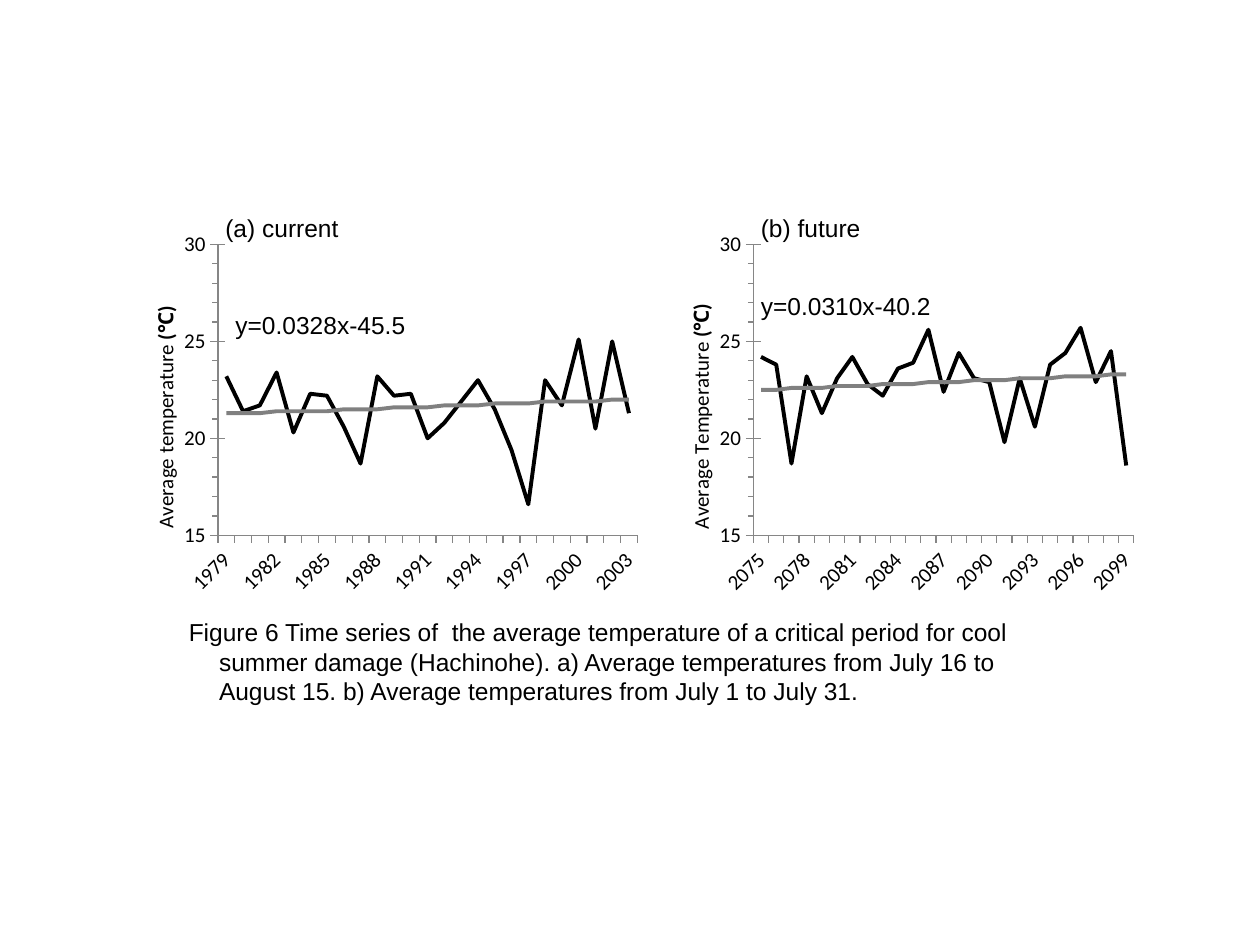
from dataclasses import dataclass

from lxml import etree
from pptx import Presentation
from pptx.chart.data import CategoryChartData
from pptx.dml.color import RGBColor
from pptx.enum.chart import XL_CHART_TYPE, XL_MARKER_STYLE, XL_TICK_MARK
from pptx.oxml.ns import qn
from pptx.util import Inches, Pt

LINE = XL_CHART_TYPE.LINE
NO_MARKER = XL_MARKER_STYLE.NONE
TICK_OUT, TICK_CROSS = XL_TICK_MARK.OUTSIDE, XL_TICK_MARK.CROSS

CHART_TOP, CHART_HEIGHT = 1.78, 3.01
PLOT_TOP, PLOT_HEIGHT = 1.94, 2.31


@dataclass(frozen=True)
class Theme:
    ink: RGBColor = RGBColor(0x00, 0x00, 0x00)
    trend: RGBColor = RGBColor(0x80, 0x80, 0x80)
    axis: RGBColor = RGBColor(0x86, 0x86, 0x86)
    text_font: str = "Arial"
    chart_font: str = "Calibri"
    text_size: Pt = Pt(14)
    chart_size: Pt = Pt(12)
    series_width: Pt = Pt(2.25)
    axis_width: Pt = Pt(0.75)


def set_layout(parent, index, inner=False, **fractions):
    """Place a chart part by hand, as fractions of the chart frame."""
    for old in parent.findall(qn("c:layout")):
        parent.remove(old)
    layout = etree.Element(qn("c:layout"))
    manual = etree.SubElement(layout, qn("c:manualLayout"))
    settings = {"layoutTarget": "inner"} if inner else {}
    settings.update(xMode="edge", yMode="edge")
    settings.update((name, f"{value:.4f}") for name, value in fractions.items())
    for name, value in settings.items():
        etree.SubElement(manual, qn(f"c:{name}")).set("val", value)
    parent.insert(index, layout)


class Figure:
    def __init__(self, page, theme):
        self.page = page
        self.theme = theme

    def text(self, content, left, top, width, height, hanging=0):
        box = self.page.shapes.add_textbox(
            Inches(left), Inches(top), Inches(width), Inches(height))
        box.text_frame.word_wrap = True
        para = box.text_frame.paragraphs[0]
        if hanging:
            properties = para._p.get_or_add_pPr()
            properties.set("marL", str(Inches(hanging)))
            properties.set("indent", str(-Inches(hanging)))
        span = para.add_run()
        span.text = content
        self.style(span.font, self.theme.text_font, self.theme.text_size)

    def style(self, font, name, size):
        font.name, font.size = name, size
        font.color.rgb = self.theme.ink

    def line_chart(self, first_year, observed, trend, title, left, width,
                   plot_left, plot_width, title_left, title_top):
        data = CategoryChartData(number_format="0.0")
        data.categories = [str(first_year + i) for i in range(len(observed))]
        data.add_series("Series 1", observed)
        data.add_series("Series 2", trend)
        chart = self.page.shapes.add_chart(
            LINE, Inches(left), Inches(CHART_TOP),
            Inches(width), Inches(CHART_HEIGHT), data).chart
        chart.has_legend = False
        chart.has_title = False
        self.style(chart.font, self.theme.chart_font, self.theme.chart_size)

        plot = chart.plots[0]
        plot.vary_by_categories = False
        for series, color in zip(plot.series, (self.theme.ink, self.theme.trend)):
            series.smooth = False
            series.marker.style = NO_MARKER
            series.format.line.width = self.theme.series_width
            series.format.line.color.rgb = color

        self.year_axis(chart)
        self.temperature_axis(chart.value_axis, title)
        set_layout(chart.element.find(".//" + qn("c:plotArea")), 0, inner=True,
                   x=(plot_left - left) / width,
                   y=(PLOT_TOP - CHART_TOP) / CHART_HEIGHT,
                   w=plot_width / width, h=PLOT_HEIGHT / CHART_HEIGHT)
        set_layout(chart.element.find(".//" + qn("c:valAx") + "/" + qn("c:title")), 1,
                   x=(title_left - left) / width,
                   y=(title_top - CHART_TOP) / CHART_HEIGHT)

    def axis_line(self, axis):
        axis.has_major_gridlines = False
        axis.format.line.color.rgb = self.theme.axis
        axis.format.line.width = self.theme.axis_width

    def year_axis(self, chart):
        """Label every third year, slanted upwards."""
        axis = chart.category_axis
        self.axis_line(axis)
        axis.major_tick_mark = TICK_OUT
        self.style(axis.tick_labels.font, self.theme.chart_font, self.theme.chart_size)
        element = chart.element.find(".//" + qn("c:catAx"))
        body = element.find(qn("c:txPr") + "/" + qn("a:bodyPr"))
        body.set("rot", "-2700000")
        body.set("vert", "horz")
        skip = etree.Element(qn("c:tickLblSkip"))
        skip.set("val", "3")
        element.find(qn("c:noMultiLvlLbl")).addprevious(skip)

    def temperature_axis(self, axis, title):
        self.axis_line(axis)
        axis.minimum_scale, axis.maximum_scale = 15, 30
        axis.major_unit, axis.minor_unit = 5, 1
        axis.major_tick_mark, axis.minor_tick_mark = TICK_CROSS, TICK_OUT
        axis.tick_labels.number_format = "0"
        axis.tick_labels.number_format_is_linked = False
        frame = axis.axis_title.text_frame
        body = frame._txBody.find(qn("a:bodyPr"))
        body.set("rot", "-5400000")
        body.set("vert", "horz")
        for content, bold in ((title + " ", False), ("(℃)", True)):
            span = frame.paragraphs[0].add_run()
            span.text = content
            self.style(span.font, self.theme.chart_font, self.theme.chart_size)
            span.font.bold = bold


CURRENT = [23.2, 21.4, 21.7, 23.4, 20.3, 22.3, 22.2, 20.6, 18.7, 23.2, 22.2, 22.3, 20,
           20.8, 21.9, 23, 21.5, 19.4, 16.6, 23, 21.7, 25.1, 20.5, 25, 21.3]
CURRENT_TREND = [21.3, 21.3, 21.3, 21.4, 21.4, 21.4, 21.4, 21.5, 21.5, 21.5, 21.6, 21.6,
                 21.6, 21.7, 21.7, 21.7, 21.8, 21.8, 21.8, 21.9, 21.9, 21.9, 21.9, 22, 22]
FUTURE = [24.2, 23.8, 18.7, 23.2, 21.3, 23.1, 24.2, 22.8, 22.2, 23.6, 23.9, 25.6, 22.4,
          24.4, 23.1, 22.9, 19.8, 23.1, 20.6, 23.8, 24.4, 25.7, 22.9, 24.5, 18.6]
FUTURE_TREND = [22.5, 22.5, 22.6, 22.6, 22.6, 22.7, 22.7, 22.7, 22.8, 22.8, 22.8, 22.9,
                22.9, 22.9, 23, 23, 23, 23.1, 23.1, 23.1, 23.2, 23.2, 23.2, 23.3, 23.3]
CAPTION = ("Figure 6 Time series of  the average temperature of a critical period for cool "
           "summer damage (Hachinohe). a) Average temperatures from July 16 to August 15. "
           "b) Average temperatures from July 1 to July 31.")


def main():
    deck = Presentation()
    deck.slide_width, deck.slide_height = Inches(10), Inches(7.5)
    figure = Figure(deck.slides.add_slide(deck.slide_layouts[6]), Theme())

    figure.line_chart(1979, CURRENT, CURRENT_TREND, "Average temperature",
                      left=0.91, width=4.25, plot_left=1.73, plot_width=3.33,
                      title_left=1.17, title_top=2.4)
    figure.line_chart(2075, FUTURE, FUTURE_TREND, "Average Temperature",
                      left=5.16, width=3.94, plot_left=5.98, plot_width=3.02,
                      title_left=5.42, title_top=2.38)

    figure.text(CAPTION, 1.4, 4.85, 7.2, 0.81, hanging=0.24)
    figure.text("y=0.0328x-45.5", 1.77, 2.41, 1.57, 0.34)
    figure.text("y=0.0310x-40.2", 5.94, 2.26, 1.57, 0.34)
    figure.text("(a) current", 1.69, 1.64, 1.46, 0.34)
    figure.text("(b) future", 5.94, 1.64, 1.46, 0.34)

    deck.save("out.pptx")


if __name__ == "__main__":
    main()
